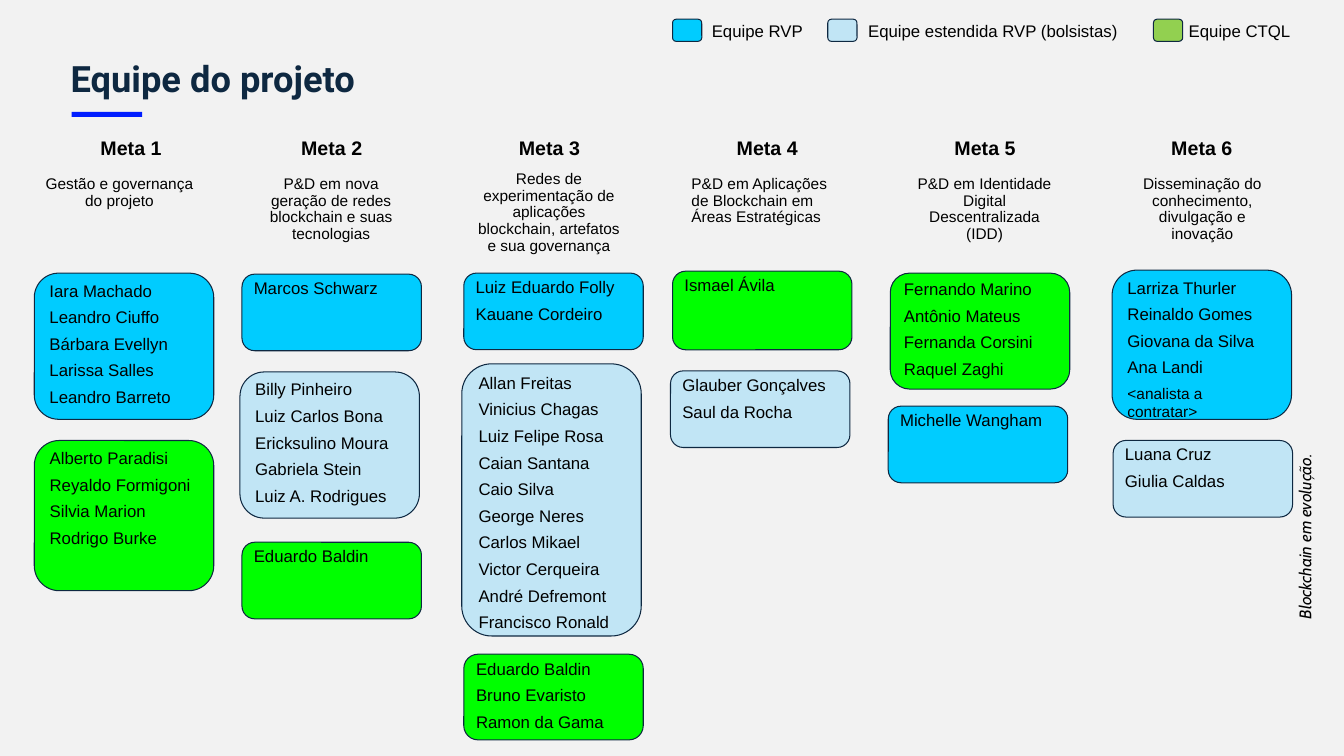
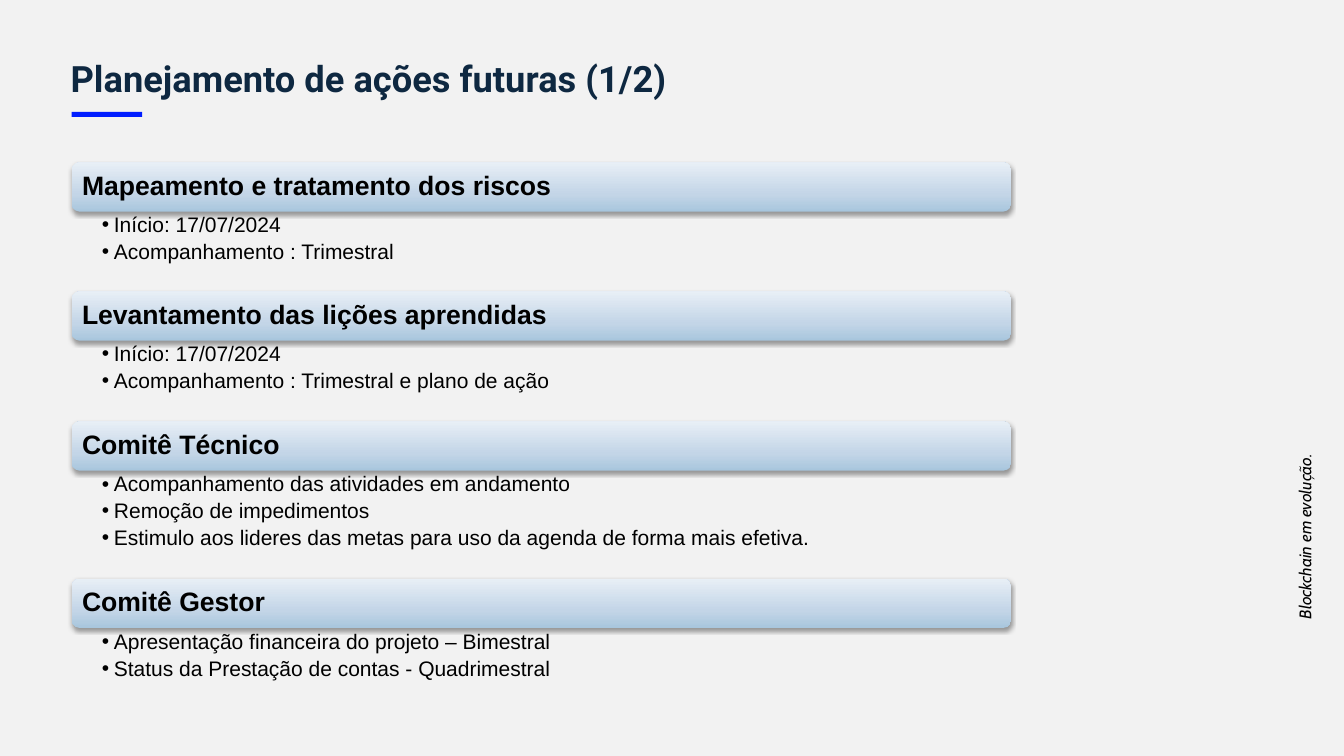
from dataclasses import dataclass

from lxml import etree
from pptx import Presentation
from pptx.dml.color import RGBColor
from pptx.enum.shapes import MSO_SHAPE
from pptx.enum.text import MSO_ANCHOR, MSO_AUTO_SIZE, PP_ALIGN
from pptx.oxml.ns import qn
from pptx.util import Pt

LEFT, CENTER = PP_ALIGN.LEFT, PP_ALIGN.CENTER
TOP, MIDDLE = MSO_ANCHOR.TOP, MSO_ANCHOR.MIDDLE
RECTANGLE, ROUNDED = MSO_SHAPE.RECTANGLE, MSO_SHAPE.ROUNDED_RECTANGLE
PX = 9144  # 100 px to the inch


@dataclass(frozen=True)
class Theme:
    paper: str = "F2F2F2"
    ink: str = "000000"
    navy: str = "0E2841"
    accent: str = "001DFF"
    core: str = "00CCFF"
    extended: str = "C1E5F5"
    partner: str = "00FF00"
    partner_key: str = "92D050"
    card: tuple = ((0, "A8C6DD"), (35, "C3D5E7"), (100, "E8EFF6"))
    body_font: str = "Arial"
    title_font: str = "Roboto"
    motto_font: str = "Cabin"
    title: float = 25.9
    heading: int = 19
    bullet: int = 15
    goal: int = 14
    name: int = 12
    small: int = 11


theme = Theme()


def write(shape, lines, size, insets, color=theme.ink, frame=None, para_format=None, font=None):
    """Fill a shape with one paragraph per line and return the paragraphs."""
    box = shape.text_frame
    frame_format = {"word_wrap": True, "auto_size": MSO_AUTO_SIZE.NONE, "vertical_anchor": TOP}
    sides = ("margin_left", "margin_top", "margin_right", "margin_bottom")
    frame_format |= {side: inset * PX for side, inset in zip(sides, insets)}
    for key, value in (frame_format | (frame or {})).items():
        setattr(box, key, value)
    box.text = "\n".join(lines)
    for para in box.paragraphs:
        for key, value in ({"alignment": LEFT} | (para_format or {})).items():
            setattr(para, key, value)
        span = para.runs[0]
        span.font.color.rgb = RGBColor.from_string(color)
        font_format = {"name": theme.body_font, "size": Pt(size), "bold": False}
        for key, value in (font_format | (font or {})).items():
            setattr(span.font, key, value)
    return box.paragraphs


def add_box(page, kind, place, fill=None, line=None):
    """Add a flat shape at a place given in px."""
    shape = page.shapes.add_shape(kind, *(value * PX for value in place))
    shape.shadow.inherit = False
    if fill:
        shape.fill.solid()
        shape.fill.fore_color.rgb = RGBColor.from_string(fill)
    if line:
        shape.line.color.rgb = RGBColor.from_string(line)
        shape.line.width = Pt(0.75)
    else:
        shape.line.fill.background()
    return shape


deck = Presentation()
deck.slide_width, deck.slide_height = 1333 * PX, 750 * PX
master = deck.slide_master
master.background.fill.solid()
master.background.fill.fore_color.rgb = RGBColor.from_string(theme.paper)

# Pages and titles
team_page = deck.slides.add_slide(deck.slide_layouts.get_by_name("Title Only"))
plan_page = deck.slides.add_slide(deck.slide_layouts.get_by_name("Comparison"))
for page, title in ((team_page, "Equipe do projeto"),
                    (plan_page, "Planejamento de ações futuras (1/2)")):
    holder = page.shapes.title
    holder.left, holder.top, holder.width, holder.height = (
        value * PX for value in (70, 68, 1193, 33))
    write(holder, [title], theme.title, (0, 0, 0, 0), theme.navy,
          para_format={"line_spacing": 0.7}, font={"name": theme.title_font, "bold": True})

# Accent bar and motto, moved to the master
bar = add_box(team_page, RECTANGLE, (71, 111, 70, 5), theme.accent)
motto = team_page.shapes.add_textbox(1197 * PX, 512 * PX, 194 * PX, 30 * PX)
motto.rotation = 270
write(motto, ["Blockchain em evolução."], theme.name, (10, 5, 10, 5),
      font={"name": theme.motto_font, "italic": True})
for shared in (bar, motto):
    master.shapes.element.append(shared.element)

# Team legend: swatch left, label left, label width
legend = [
    (667, 693, 237, theme.core, "Equipe RVP"),
    (821, 848, 289, theme.extended, "Equipe estendida RVP (bolsistas)"),
    (1144, 1166, 167, theme.partner_key, "Equipe CTQL"),
]
for swatch_left, label_left, width, color, label in legend:
    add_box(team_page, ROUNDED, (swatch_left, 19, 29, 22), color, theme.navy)
    text = team_page.shapes.add_textbox(label_left * PX, 14 * PX, width * PX, 34 * PX)
    write(text, [label], theme.name, (13, 7, 13, 7))

# Goals: heading left, description left, top, alignment, lines
goals = [
    (86, 34, 165, CENTER, ["Gestão e governança do projeto"]),
    (285, 244, 165, CENTER, ["P&D em nova geração de redes blockchain e suas tecnologias"]),
    (501, 460, 160, CENTER, ["Redes de experimentação de aplicações blockchain, artefatos",
                             "e sua governança"]),
    (717, 676, 165, LEFT, ["P&D em Aplicações de Blockchain em Áreas Estratégicas"]),
    (933, 892, 165, CENTER, ["P&D em Identidade Digital Descentralizada (IDD)"]),
    (1148, 1108, 165, CENTER, ["Disseminação do conhecimento, divulgação e inovação"]),
]
for number, (heading_left, left, top, alignment, lines) in enumerate(goals, 1):
    heading = team_page.shapes.add_textbox(heading_left * PX, 128 * PX, 88 * PX, 37 * PX)
    write(heading, [f"Meta {number}"], theme.goal, (13, 7, 13, 7),
          frame={"word_wrap": False}, para_format={"alignment": CENTER}, font={"bold": True})
    description = team_page.shapes.add_textbox(left * PX, top * PX, 169 * PX, 87 * PX)
    write(description, lines, theme.small, (10, 10, 10, 10),
          para_format={"alignment": alignment, "line_spacing": 0.9})

# Teams: left, top, height, colour, names
teams = [
    (34, 271, 145, theme.core, ["Iara Machado", "Leandro Ciuffo", "Bárbara Evellyn",
                                "Larissa Salles", "Leandro Barreto"]),
    (34, 437, 149, theme.partner, ["Alberto Paradisi", "Reyaldo Formigoni",
                                   "Silvia Marion", "Rodrigo Burke"]),
    (240, 272, 76, theme.core, ["Marcos Schwarz"]),
    (238, 369, 145, theme.extended, ["Billy Pinheiro", "Luiz Carlos Bona", "Ericksulino Moura",
                                     "Gabriela Stein", "Luiz A. Rodrigues"]),
    (240, 538, 76, theme.partner, ["Eduardo Baldin"]),
    (460, 271, 76, theme.core, ["Luiz Eduardo Folly", "Kauane Cordeiro"]),
    (458, 361, 270, theme.extended, ["Allan Freitas", "Vinicius Chagas", "Luiz Felipe Rosa",
                                     "Caian Santana", "Caio Silva", "George Neres",
                                     "Carlos Mikael", "Victor Cerqueira",
                                     "André Defremont", "Francisco Ronald"]),
    (460, 649, 85, theme.partner, ["Eduardo Baldin", "Bruno Evaristo", "Ramon da Gama"]),
    (667, 269, 78, theme.partner, ["Ismael Ávila"]),
    (665, 368, 76, theme.extended, ["Glauber Gonçalves", "Saul da Rocha"]),
    (883, 271, 115, theme.partner, ["Fernando Marino", "Antônio Mateus",
                                    "Fernanda Corsini", "Raquel Zaghi"]),
    (881, 403, 76, theme.core, ["Michelle Wangham"]),
    (1103, 268, 148, theme.core, ["Larriza Thurler", "Reinaldo Gomes", "Giovana da Silva",
                                  "Ana Landi", "<analista a contratar>"]),
    (1104, 437, 76, theme.extended, ["Luana Cruz", "Giulia Caldas"]),
]
for left, top, height, color, names in teams:
    team = add_box(team_page, ROUNDED, (left, top, 178, height), color, theme.navy)
    for para in write(team, names, theme.name, (8, 0, 8, 8),
                      para_format={"space_after": Pt(4.6)}):
        if para.text.startswith("<"):  # open position
            para.runs[0].font.size = Pt(theme.small)

# Planned actions: card top, heading, bullets
actions = [
    (161, "Mapeamento e tratamento dos riscos",
     ["Início: 17/07/2024", "Acompanhamento : Trimestral"]),
    (289, "Levantamento das lições aprendidas",
     ["Início: 17/07/2024", "Acompanhamento : Trimestral e plano de ação"]),
    (418, "Comitê Técnico",
     ["Acompanhamento das atividades em andamento", "Remoção de impedimentos",
      "Estimulo aos lideres das metas para uso da agenda de forma mais efetiva."]),
    (574, "Comitê Gestor",
     ["Apresentação financeira do projeto – Bimestral",
      "Status da Prestação de contas - Quadrimestral"]),
]
bodies = [holder for holder in plan_page.placeholders if holder.placeholder_format.idx > 0]
for (top, heading, bullets), body in zip(actions, bodies):
    card = add_box(plan_page, ROUNDED, (71, top, 932, 49))
    write(card, [heading], theme.heading, (8, 8, 8, 8), frame={"vertical_anchor": MIDDLE},
          para_format={"line_spacing": 0.9}, font={"bold": True})

    # Three-stop gradient, light at the top
    card.fill.gradient()
    card.fill.gradient_angle = 90
    stops = card.element.spPr.find(qn("a:gradFill")).find(qn("a:gsLst"))
    for stop in list(stops):
        stops.remove(stop)
    for position, color in theme.card:
        stop = etree.SubElement(stops, qn("a:gs"), pos=str(position * 1000))
        etree.SubElement(stop, qn("a:srgbClr"), val=color)

    # Soft shadow below the card
    effects = card.element.spPr.find(qn("a:effectLst"))
    shadow = etree.SubElement(effects, qn("a:outerShdw"), blurRad="40000", dist="20000",
                              dir="5400000", rotWithShape="0")
    tint = etree.SubElement(shadow, qn("a:srgbClr"), val=theme.ink)
    etree.SubElement(tint, qn("a:alpha"), val="38000")

    # Bulleted list under the card
    body.left, body.top, body.width, body.height = (
        value * PX for value in (71, top + 49, 932, 27 * len(bullets)))
    paragraphs = write(body, bullets, theme.bullet, (30, 3, 15, 3),
                       para_format={"line_spacing": 0.9, "space_before": Pt(3)})
    paragraphs[0].space_before = Pt(0)
    for para in paragraphs:
        properties = para._p.get_or_add_pPr()
        properties.set("marL", str(12 * PX))
        properties.set("indent", str(-12 * PX))
        bullet_color = etree.SubElement(properties, qn("a:buClr"))
        etree.SubElement(bullet_color, qn("a:srgbClr"), val=theme.ink)
        etree.SubElement(properties, qn("a:buChar"), char="•")

deck.save("out.pptx")
